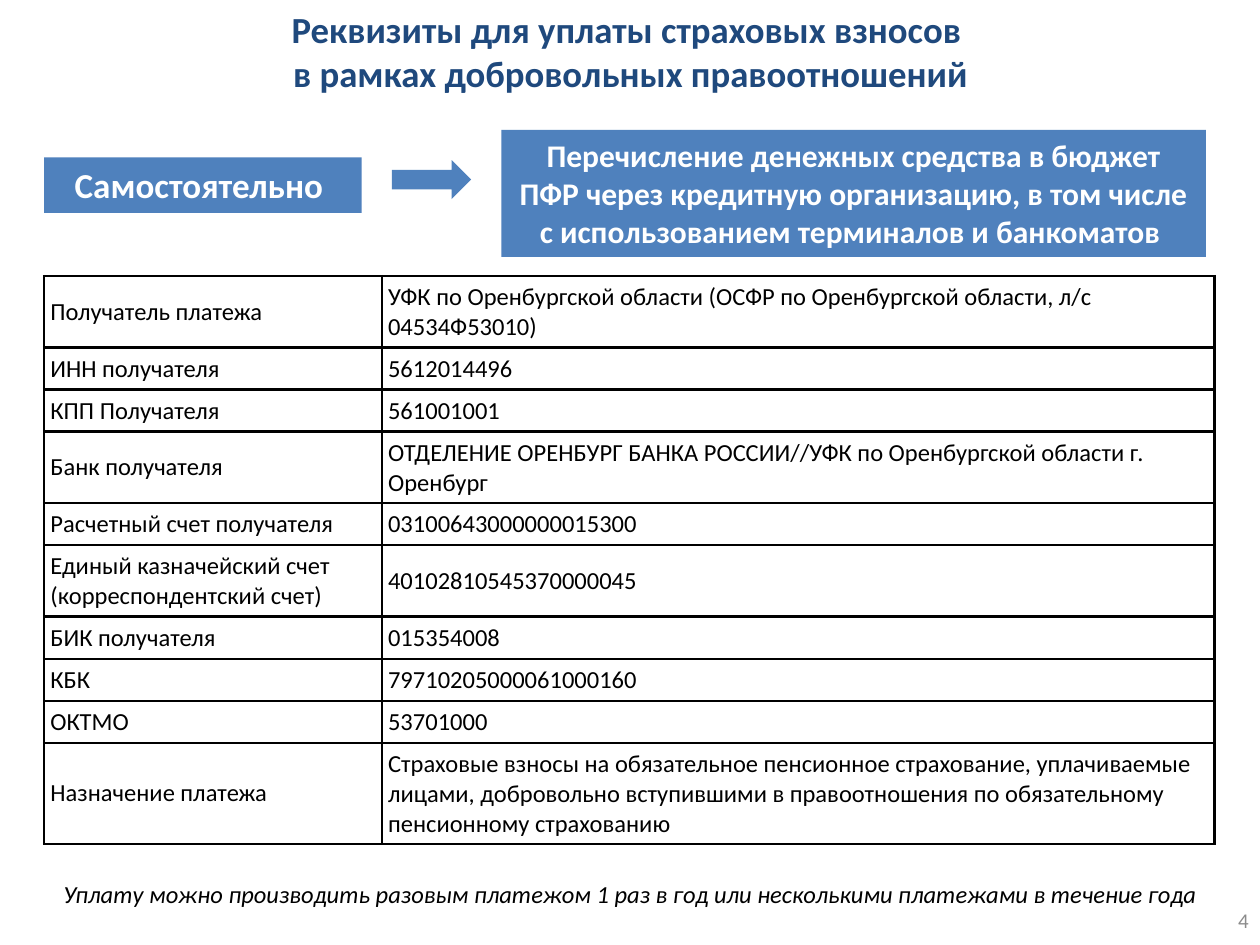
import pptx
import pptx.util
import pptx.dml.color
import pptx.enum.shapes
import pptx.enum.text
import pptx.oxml
import pptx.oxml.ns
from lxml import etree

Inches, Pt = pptx.util.Inches, pptx.util.Pt
RGBColor = pptx.dml.color.RGBColor
SHAPE = pptx.enum.shapes.MSO_SHAPE
ALIGN = pptx.enum.text.PP_ALIGN
ANCHOR = pptx.enum.text.MSO_ANCHOR

NAVY = RGBColor(0x1F, 0x49, 0x7D)
BLUE = RGBColor(0x4F, 0x81, 0xBD)
WHITE = RGBColor(0xFF, 0xFF, 0xFF)
BLACK = RGBColor(0, 0, 0)
GRAY = RGBColor(0x8C, 0x8C, 0x8C)
FONT = "Calibri"

# Content
TITLE = ["Реквизиты для уплаты страховых взносов ",
         "в рамках добровольных правоотношений"]
METHOD = "Самостоятельно "
DETAILS = ("Перечисление денежных средства в бюджет ПФР через кредитную "
           "организацию, в том числе с использованием терминалов и банкоматов ")
NOTE = ("Уплату можно производить разовым платежом 1 раз в год "
        "или несколькими платежами в течение года")
PAGE = "4"

# Label, value, number of text lines in the row
REQUISITES = [
    ("Получатель платежа",
     "УФК по Оренбургской области (ОСФР по Оренбургской области, л/с 04534Ф53010)", 2),
    ("ИНН получателя", "5612014496", 1),
    ("КПП Получателя", "561001001", 1),
    ("Банк получателя",
     "ОТДЕЛЕНИЕ ОРЕНБУРГ БАНКА РОССИИ//УФК по Оренбургской области г. Оренбург", 2),
    ("Расчетный счет получателя", "03100643000000015300", 1),
    ("Единый казначейский счет (корреспондентский счет)", "40102810545370000045", 2),
    ("БИК получателя", "015354008", 1),
    ("КБК", "79710205000061000160", 1),
    ("ОКТМО", "53701000", 1),
    ("Назначение платежа",
     "Страховые взносы на обязательное пенсионное страхование, уплачиваемые лицами, "
     "добровольно вступившими в правоотношения по обязательному пенсионному страхованию", 3),
]
COLUMNS = [2.68, 6.61]
LINE_HEIGHT, CELL_MARGIN = 0.23, 0.05


def write(tf, lines, size, color, align, anchor=ANCHOR.MIDDLE, bold=False, italic=False):
    tf.word_wrap = True
    tf.vertical_anchor = anchor
    for i, line in enumerate(lines):
        p = tf.add_paragraph() if i else tf.paragraphs[0]
        p.text = line
        p.alignment = align
        p.font.name, p.font.size, p.font.color.rgb = FONT, Pt(size), color
        p.font.bold, p.font.italic = bold, italic


def add_text(slide, box, *args, **style):
    write(slide.shapes.add_textbox(*map(Inches, box)).text_frame, *args, **style)


def add_block(slide, kind, box):
    sp = slide.shapes.add_shape(kind, *map(Inches, box))
    sp.shadow.inherit = False
    sp.fill.solid()
    sp.fill.fore_color.rgb = BLUE
    sp.line.fill.background()
    return sp


def add_borders(cell):
    tc_pr = cell._tc.get_or_add_tcPr()
    for i, side in enumerate(("lnL", "lnR", "lnT", "lnB")):
        ln = pptx.oxml.parse_xml(
            f'<a:{side} {pptx.oxml.ns.nsdecls("a")} w="{Pt(1.5)}">'
            f'<a:solidFill><a:srgbClr val="{BLACK}"/></a:solidFill></a:{side}>')
        tc_pr.insert(i, ln)


def add_requisites(slide):
    heights = [2 * CELL_MARGIN + LINE_HEIGHT * lines for *_, lines in REQUISITES]
    table = slide.shapes.add_table(
        len(REQUISITES), len(COLUMNS), Inches(0.35), Inches(2.19),
        Inches(sum(COLUMNS)), Inches(sum(heights))).table
    table.first_row = table.horz_banding = False
    for column, width in zip(table.columns, COLUMNS):
        column.width = Inches(width)
    for row, height, (label, value, _) in zip(table.rows, heights, REQUISITES):
        row.height = Inches(height)
        for cell, text in zip(row.cells, (label, value)):
            cell.margin_left = cell.margin_right = Inches(CELL_MARGIN)
            cell.margin_top = cell.margin_bottom = Inches(CELL_MARGIN)
            cell.vertical_anchor = ANCHOR.MIDDLE
            cell.fill.background()
            p = cell.text_frame.paragraphs[0]
            p.text = text
            p.font.name, p.font.size, p.font.color.rgb = FONT, Pt(14), BLACK
            add_borders(cell)


def main():
    prs = pptx.Presentation()
    prs.slide_width, prs.slide_height = Inches(10), Inches(7.5)
    slide = prs.slides.add_slide(prs.slide_layouts[6])

    # Title
    add_text(slide, (0.28, 0.21, 9.45, 0.39), TITLE, 21, NAVY, ALIGN.CENTER, bold=True)

    # Payment method, arrow, details
    for box, text, size in [((0.35, 1.25, 2.52, 0.44), METHOD, 20),
                            ((3.98, 1.03, 5.59, 1.01), DETAILS, 18)]:
        sp = add_block(slide, SHAPE.RECTANGLE, box)
        write(sp.text_frame, [text], size, WHITE, ALIGN.CENTER, ANCHOR.TOP, bold=True)
    add_block(slide, SHAPE.RIGHT_ARROW, (3.11, 1.27, 0.63, 0.31))

    # Table of requisites
    add_requisites(slide)

    # Note and page number
    add_text(slide, (0.24, 6.92, 9.53, 0.34), [NOTE], 14, BLACK, ALIGN.CENTER, italic=True)
    add_text(slide, (7.68, 7.1, 2.33, 0.4), [PAGE], 12, GRAY, ALIGN.RIGHT)

    prs.save("out.pptx")


if __name__ == "__main__":
    main()
